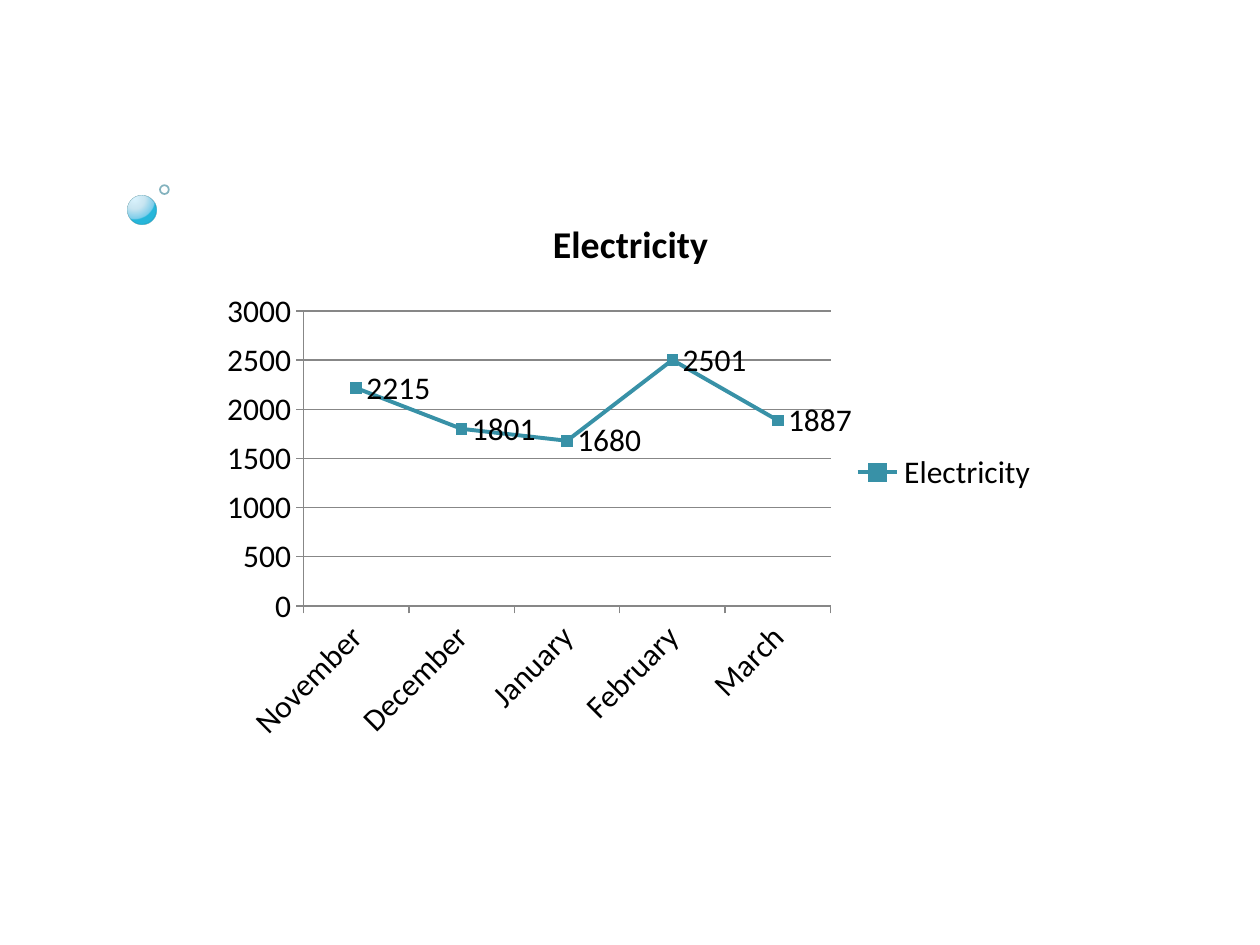
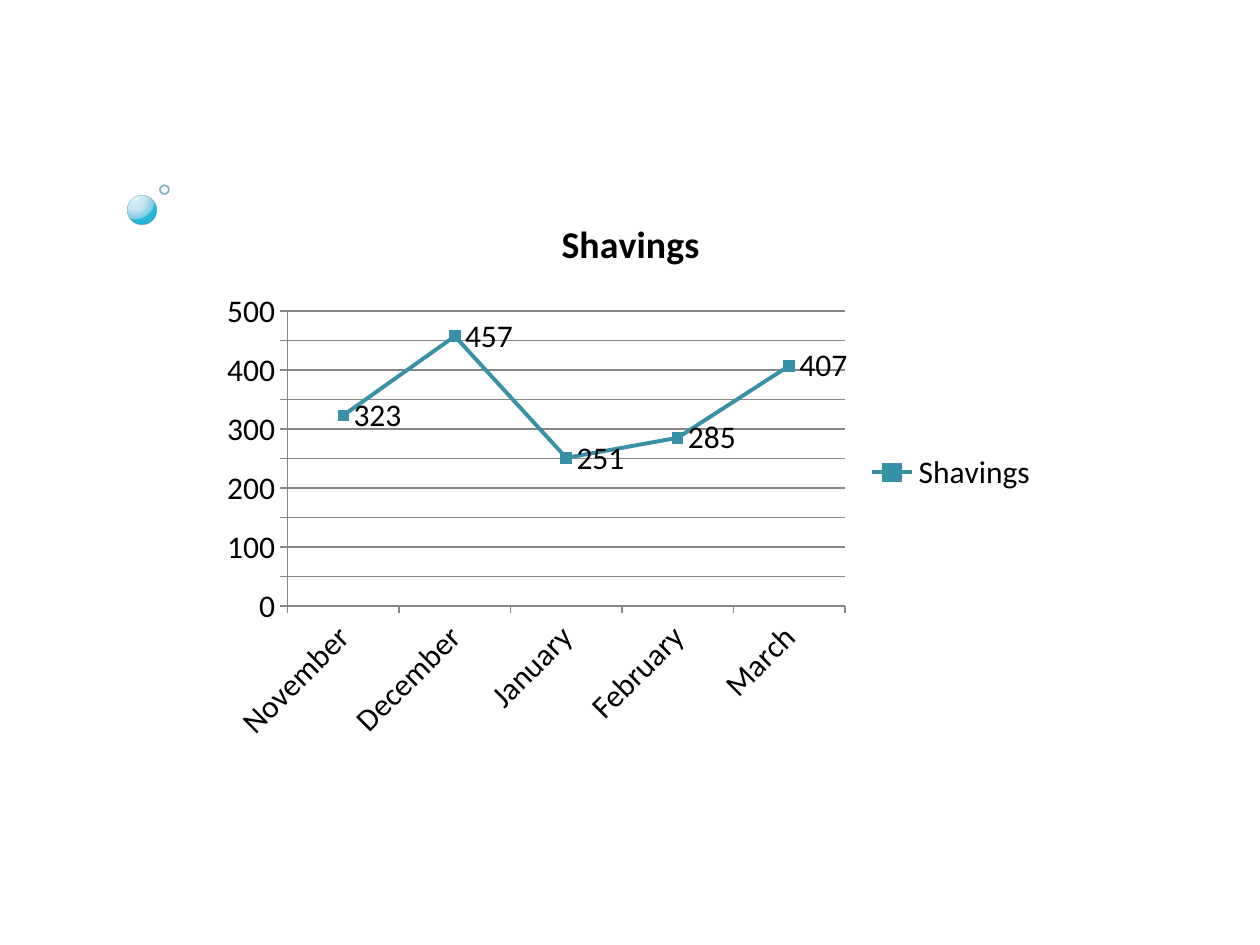
from dataclasses import dataclass
from typing import Any

from lxml import etree
from pptx import Presentation
from pptx.chart.data import CategoryChartData
from pptx.dml.color import RGBColor
from pptx.enum.chart import (XL_CHART_TYPE, XL_LABEL_POSITION,
                             XL_LEGEND_POSITION, XL_MARKER_STYLE, XL_TICK_MARK)
from pptx.enum.shapes import MSO_SHAPE
from pptx.oxml.ns import qn
from pptx.util import Inches, Pt

LINE = XL_CHART_TYPE.LINE_MARKERS
RIGHT = XL_LABEL_POSITION.RIGHT
SIDE = XL_LEGEND_POSITION.RIGHT
SQUARE = XL_MARKER_STYLE.SQUARE
OUT, NONE = XL_TICK_MARK.OUTSIDE, XL_TICK_MARK.NONE
OVAL = MSO_SHAPE.OVAL
BLANK = 6


@dataclass(frozen=True)
class Theme:
    face: str = "Calibri"
    ink: str = "000000"
    trend: str = "3891A7"
    grid: str = "878787"
    text: float = 18
    title: float = 21.6
    # Stops of the bubble: position, colour, opacity in percent
    stops: tuple = ((0, "DAF4FF", 95), (50, "C3E3F0", 90),
                    (95, "6BC7E8", 88), (100, "00ABD5", 85))


@dataclass(frozen=True)
class Bubble:
    left: float
    top: float
    size: float
    rim: str
    width: float
    glossy: bool


@dataclass(frozen=True)
class Usage:
    name: str
    values: tuple
    top: int
    step: int


THEME = Theme()
MONTHS = ("November", "December", "January", "February", "March")
BUBBLES = (Bubble(1.01, 1.55, 0.23, "308EA5", 0.16, True),
           Bubble(1.27, 1.47, 0.07, "318093", 1, False))
USAGES = (Usage("Electricity", (2215, 1801, 1680, 2501, 1887), 3000, 500),
          Usage("Shavings", (323, 457, 251, 285, 407), 500, 50))


def apply(target: Any, values: dict) -> None:
    for key, value in values.items():
        setattr(target, key, value)


def style(font: Any, size: float, bold: bool) -> None:
    apply(font, {"name": THEME.face, "size": Pt(size), "bold": bold})
    font.color.rgb = RGBColor.from_string(THEME.ink)


def stroke(line: Any, color: str, width: float) -> None:
    line.color.rgb = RGBColor.from_string(color)
    line.width = Pt(width)


def fade(color: Any, percent: int) -> None:
    etree.SubElement(color, qn("a:alpha"), val=str(percent * 1000))


def gloss(shape: Any) -> None:
    """Fill a shape with the radial gradient of the theme."""
    shape.fill.gradient()
    grad = shape.element.spPr.find(qn("a:gradFill"))
    grad.clear()
    stops = etree.SubElement(grad, qn("a:gsLst"))
    for place, color, alpha in THEME.stops:
        stop = etree.SubElement(stops, qn("a:gs"), pos=str(place * 1000))
        fade(etree.SubElement(stop, qn("a:srgbClr"), val=color), alpha)
    path = etree.SubElement(grad, qn("a:path"), {"path": "circle"})
    etree.SubElement(path, qn("a:fillToRect"),
                     l="25000", t="12000", r="75000", b="88000")


def add_bubble(slide: Any, bubble: Bubble) -> None:
    """Draw a bubble and move it to the layout that the slides share."""
    size = Inches(bubble.size)
    shape = slide.shapes.add_shape(
        OVAL, Inches(bubble.left), Inches(bubble.top), size, size)
    shape.shadow.inherit = False
    if bubble.glossy:
        gloss(shape)
    else:
        shape.fill.background()
    stroke(shape.line, bubble.rim, bubble.width)
    fade(shape.element.spPr.find(qn("a:ln")).find(".//" + qn("a:srgbClr")), 60)
    slide.slide_layout.shapes.element.append(shape.element)


def add_usage(slide: Any, usage: Usage) -> None:
    data = CategoryChartData()
    data.categories = MONTHS
    data.add_series(usage.name, usage.values)
    chart = slide.shapes.add_chart(
        LINE, Inches(1.67), Inches(1.53), Inches(6.67), Inches(4.44), data).chart
    style(chart.font, THEME.text, False)

    # Title and legend
    apply(chart, {"has_title": True, "has_legend": True})
    chart.chart_title.include_in_layout = False
    frame = chart.chart_title.text_frame
    frame.text = usage.name
    style(frame.paragraphs[0].runs[0].font, THEME.title, True)
    apply(chart.legend, {"position": SIDE, "include_in_layout": False})

    # Axes
    scale = chart.value_axis
    apply(scale, {"minimum_scale": 0, "maximum_scale": usage.top,
                  "major_unit": usage.step, "has_major_gridlines": True})
    for axis in (chart.category_axis, scale):
        apply(axis, {"major_tick_mark": OUT, "minor_tick_mark": NONE})
        stroke(axis.format.line, THEME.grid, 0.75)
    stroke(scale.major_gridlines.format.line, THEME.grid, 0.75)

    # Trend line with its values
    plot = chart.plots[0]
    apply(plot, {"vary_by_categories": False, "has_data_labels": True})
    apply(plot.data_labels, {"show_value": True, "position": RIGHT})
    trend = plot.series[0]
    trend.smooth = False
    stroke(trend.format.line, THEME.trend, 2.25)
    apply(trend.marker, {"style": SQUARE, "size": 6})
    look = trend.marker.format
    look.fill.solid()
    look.fill.fore_color.rgb = RGBColor.from_string(THEME.trend)
    look.line.fill.background()


def main() -> None:
    deck = Presentation()
    apply(deck, {"slide_width": Inches(10), "slide_height": Inches(7.5)})
    layout = deck.slide_layouts[BLANK]
    slides = [deck.slides.add_slide(layout) for _ in USAGES]
    for bubble in BUBBLES:
        add_bubble(slides[0], bubble)
    for slide, usage in zip(slides, USAGES):
        add_usage(slide, usage)
    deck.save("out.pptx")


if __name__ == "__main__":
    main()
